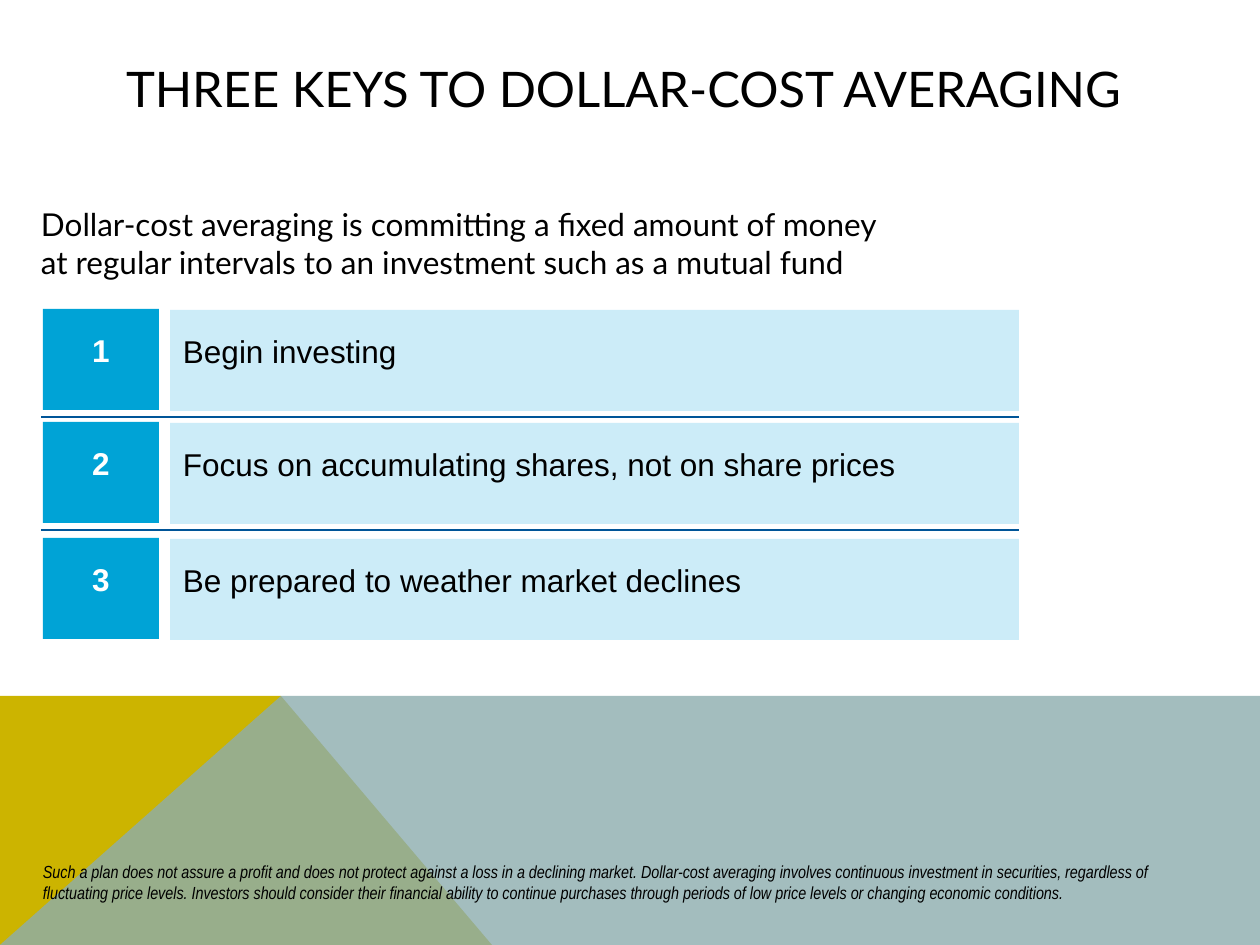
"""Build the slide on three keys to dollar-cost averaging."""
from lxml.etree import SubElement
from pptx import Presentation
from pptx.dml.color import RGBColor
from pptx.enum.shapes import MSO_CONNECTOR, MSO_SHAPE
from pptx.enum.text import MSO_ANCHOR, PP_ALIGN
from pptx.oxml.ns import qn
from pptx.util import Pt

PX = 914400 / 126
W, H = 1260, 945

TITLE = "THREE KEYS TO DOLLAR-COST AVERAGING"
INTRO = ("Dollar-cost averaging is committing a fixed amount of money\v"
         "at regular intervals to an investment such as a mutual fund")
KEYS = ["Begin investing",
        "Focus on accumulating shares, not on share prices",
        "Be prepared to weather market declines"]
NOTE = ("Such a plan does not assure a profit and does not protect against a loss in a "
        "declining market. Dollar-cost averaging involves continuous investment in "
        "securities, regardless of fluctuating price levels. Investors should consider "
        "their financial ability to continue purchases through periods of low price "
        "levels or changing economic conditions.")
BANDS = [([(0, H), (0, 696), (281, 696), (492, H)], "CCB400", None),
         ([(0, H), (281, 696), (W, 696), (W, H)], "8CADAE", 80)]

ROW_TOPS = [309, 422, 538]
ROW_H, RULE_GAP = 101, 7
NUM_X, NUM_W = 43, 116
KEY_X, KEY_W = 170, 849
RULE_X = 41

HEAD = {"name": "Lato", "size": Pt(28), "bold": False}
BODY = {"name": "Lato", "size": Pt(18)}
NUM = {"name": "Arial", "size": Pt(18), "bold": True}
KEY = {"name": "Arial", "size": Pt(18), "bold": False}
SMALL = {"name": "Arial Narrow", "size": Pt(10), "italic": True}


def emu(*px):
    return [round(v * PX) for v in px]


def rgb(value):
    return RGBColor.from_string(value)


def fill(sp, color, alpha=None):
    sp.shadow.inherit = False
    sp.fill.solid()
    sp.fill.fore_color.rgb = rgb(color)
    sp.line.fill.background()
    if alpha:
        clr = sp._element.spPr.find(".//" + qn("a:srgbClr"))
        SubElement(clr, qn("a:alpha"), val=str(alpha * 1000))


def write(sp, text, font, color="000000", align=PP_ALIGN.LEFT,
          anchor=MSO_ANCHOR.TOP, inset=(13, 6)):
    tf = sp.text_frame
    tf.text = text
    x, y = emu(*inset)
    frame = {"word_wrap": True, "vertical_anchor": anchor, "margin_left": x,
             "margin_right": x, "margin_top": y, "margin_bottom": y}
    for name, value in frame.items():
        setattr(tf, name, value)
    p = tf.paragraphs[0]
    p.alignment = align
    for r in p.runs:
        for name, value in font.items():
            setattr(r.font, name, value)
        r.font.color.rgb = rgb(color)


def add_band(s, points, color, alpha):
    fb = s.shapes.build_freeform(*points[0], scale=PX)
    fb.add_line_segments(points[1:], close=True)
    fill(fb.convert_to_shape(), color, alpha)


def add_cell(s, box, back, text, font, **style):
    sp = s.shapes.add_shape(MSO_SHAPE.RECTANGLE, *emu(*box))
    fill(sp, back)
    write(sp, text, font, inset=(13, 22), **style)


def add_rule(s, y):
    ln = s.shapes.add_connector(MSO_CONNECTOR.STRAIGHT,
                                *emu(RULE_X, y, KEY_X + KEY_W, y))
    ln.line.color.rgb = rgb("005598")
    ln.line.width = Pt(0.75)
    SubElement(ln._element.spPr, qn("a:effectLst"))


def main():
    prs = Presentation()
    prs.slide_width, prs.slide_height = emu(W, H)
    s = prs.slides.add_slide(prs.slide_layouts[5])

    for band in BANDS:
        add_band(s, *band)

    title = s.shapes.title
    title.left, title.top, title.width, title.height = emu(113, 50, 1036, 76)
    write(title, TITLE, HEAD, anchor=MSO_ANCHOR.MIDDLE)

    write(s.shapes.add_textbox(*emu(28, 199, 1232, 89)), INTRO, BODY)

    for i, (top, key) in enumerate(zip(ROW_TOPS, KEYS), 1):
        add_cell(s, (NUM_X, top, NUM_W, ROW_H), "00A3D6", str(i), NUM,
                 color="FFFFFF", align=PP_ALIGN.CENTER)
        add_cell(s, (KEY_X, top + 1, KEY_W, ROW_H), "CCECF8", key, KEY)
    for top in ROW_TOPS[:-1]:
        add_rule(s, top + ROW_H + RULE_GAP)

    write(s.shapes.add_textbox(*emu(43, 854, 1123, 55)), NOTE, SMALL,
          anchor=MSO_ANCHOR.BOTTOM, inset=(0, 6))
    prs.save("out.pptx")


if __name__ == "__main__":
    main()
